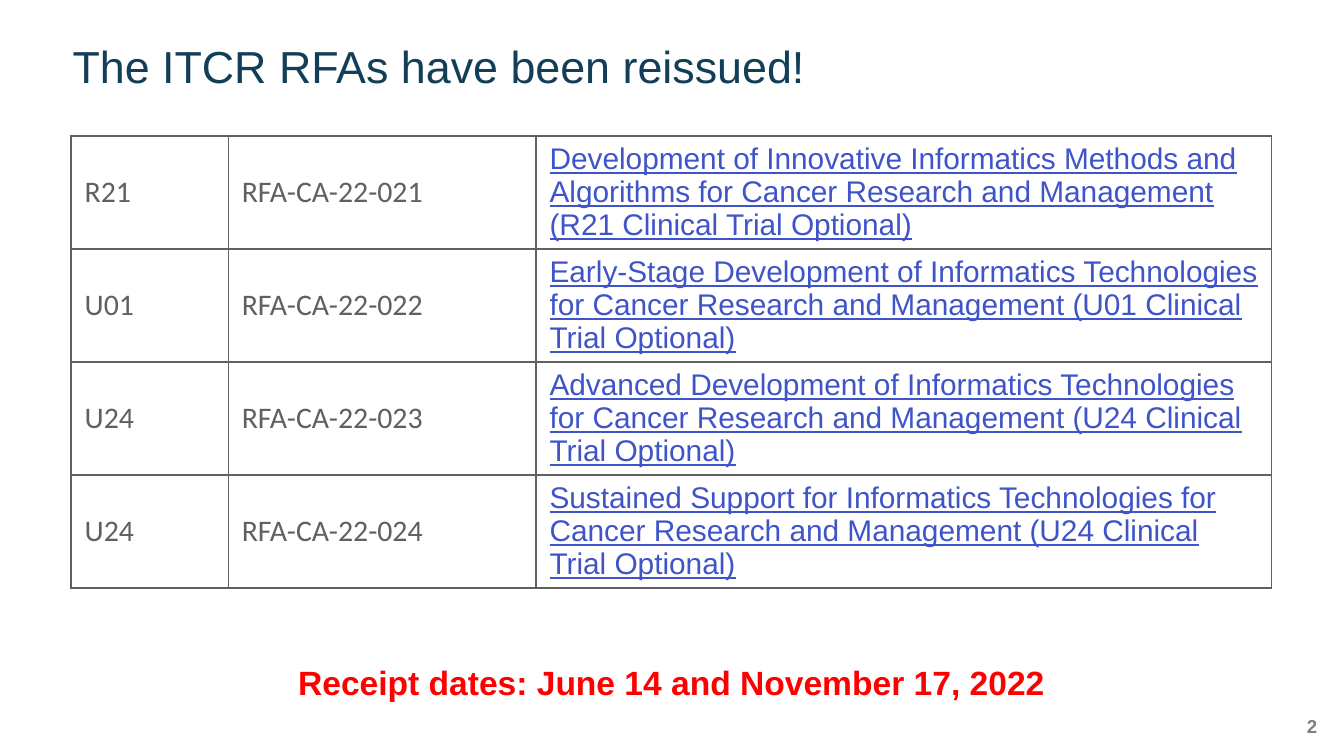
import dataclasses
import typing

import lxml.etree
import pptx
import pptx.dml.color
import pptx.enum.text
import pptx.oxml.ns
import pptx.util

Inches = pptx.util.Inches
Anchor = pptx.enum.text.MSO_ANCHOR
Align = pptx.enum.text.PP_ALIGN


@dataclasses.dataclass(frozen=True)
class TextStyle:
    font: str
    size: int
    color: str
    bold: bool = False
    underline: bool = False


@dataclasses.dataclass(frozen=True)
class Theme:
    title: TextStyle = TextStyle("Arial", 24, "123E57")
    code: TextStyle = TextStyle("Calibri", 16, "606060")
    opportunity: TextStyle = TextStyle("Arial", 16, "3F54C9", underline=True)
    dates: TextStyle = TextStyle("Arial", 18, "FF0000", bold=True)
    page_number: TextStyle = TextStyle("Arial", 10, "7F7F7F", bold=True)
    border_color: str = "606060"
    border_points: float = 1


@dataclasses.dataclass(frozen=True)
class Label:
    text: str
    left: float
    top: float
    width: float
    height: float
    style: TextStyle
    anchor: typing.Any = Anchor.TOP
    align: typing.Any = Align.LEFT
    line_spacing: float = 1.0
    padded: bool = False


class Announcement(typing.NamedTuple):
    mechanism: str
    number: str
    title: str


THEME = Theme()
SLIDE_WIDTH = 10
SLIDE_HEIGHT = SLIDE_WIDTH * 9 / 16
TOPIC = "Cancer Research and Management"
ANNOUNCEMENTS = [
    Announcement("R21", "RFA-CA-22-021",
                 f"Development of Innovative Informatics Methods and Algorithms for {TOPIC}"),
    Announcement("U01", "RFA-CA-22-022",
                 f"Early-Stage Development of Informatics Technologies for {TOPIC}"),
    Announcement("U24", "RFA-CA-22-023",
                 f"Advanced Development of Informatics Technologies for {TOPIC}"),
    Announcement("U24", "RFA-CA-22-024",
                 f"Sustained Support for Informatics Technologies for {TOPIC}"),
]
LABELS = [
    Label("The ITCR RFAs have been reissued!", 0.54, 0.34, 8.93, 0.35, THEME.title,
          anchor=Anchor.BOTTOM, line_spacing=0.9),
    Label("Receipt dates: June 14 and November 17, 2022", 2.12, 4.88, 6.04, 0.4,
          THEME.dates, padded=True),
    Label("2", 9.46, 5.32, 0.34, 0.2, THEME.page_number, align=Align.RIGHT),
]
COLUMN_WIDTHS = [1.17, 2.29, 5.47]
ROW_HEIGHT = 0.84


def style_runs(paragraph: typing.Any, style: TextStyle) -> None:
    for run in paragraph.runs:
        run.font.name = style.font
        run.font.size = pptx.util.Pt(style.size)
        run.font.bold = style.bold
        run.font.underline = style.underline
        run.font.color.rgb = pptx.dml.color.RGBColor.from_string(style.color)


def draw_label(slide: typing.Any, label: Label) -> None:
    shape = slide.shapes.add_textbox(Inches(label.left), Inches(label.top),
                                     Inches(label.width), Inches(label.height))
    text_frame = shape.text_frame
    text_frame.word_wrap = True
    text_frame.vertical_anchor = label.anchor
    if not label.padded:
        text_frame.margin_left = text_frame.margin_right = 0
        text_frame.margin_top = text_frame.margin_bottom = 0
    text_frame.text = label.text
    paragraph = text_frame.paragraphs[0]
    paragraph.alignment = label.align
    paragraph.line_spacing = label.line_spacing
    style_runs(paragraph, label.style)


def draw_borders(cell: typing.Any) -> None:
    properties = cell._tc.get_or_add_tcPr()
    width = str(int(pptx.util.Pt(THEME.border_points)))
    for position, side in enumerate(("a:lnL", "a:lnR", "a:lnT", "a:lnB")):
        line = lxml.etree.Element(pptx.oxml.ns.qn(side), w=width)
        fill = lxml.etree.SubElement(line, pptx.oxml.ns.qn("a:solidFill"))
        lxml.etree.SubElement(fill, pptx.oxml.ns.qn("a:srgbClr"), val=THEME.border_color)
        properties.insert(position, line)


def draw_cell(cell: typing.Any, text: str, style: TextStyle, anchor: typing.Any) -> None:
    cell.text_frame.text = text
    cell.vertical_anchor = anchor
    cell.fill.background()
    style_runs(cell.text_frame.paragraphs[0], style)
    draw_borders(cell)


def draw_announcements(slide: typing.Any, announcements: list[Announcement]) -> None:
    shape = slide.shapes.add_table(
        len(announcements), len(COLUMN_WIDTHS), Inches(0.53), Inches(1.01),
        Inches(sum(COLUMN_WIDTHS)), Inches(ROW_HEIGHT * len(announcements)))
    table = shape.table
    table.first_row = False
    table.horz_banding = False
    for column, width in zip(table.columns, COLUMN_WIDTHS):
        column.width = Inches(width)
    for row, announcement in zip(table.rows, announcements):
        row.height = Inches(ROW_HEIGHT)
        mechanism, number, title = row.cells
        draw_cell(mechanism, announcement.mechanism, THEME.code, Anchor.MIDDLE)
        draw_cell(number, announcement.number, THEME.code, Anchor.MIDDLE)
        full_title = f"{announcement.title} ({announcement.mechanism} Clinical Trial Optional)"
        draw_cell(title, full_title, THEME.opportunity, Anchor.TOP)


def main() -> None:
    presentation = pptx.Presentation()
    presentation.slide_width = Inches(SLIDE_WIDTH)
    presentation.slide_height = Inches(SLIDE_HEIGHT)
    slide = presentation.slides.add_slide(presentation.slide_layouts[6])
    draw_announcements(slide, ANNOUNCEMENTS)
    for label in LABELS:
        draw_label(slide, label)
    presentation.save("out.pptx")


if __name__ == "__main__":
    main()
